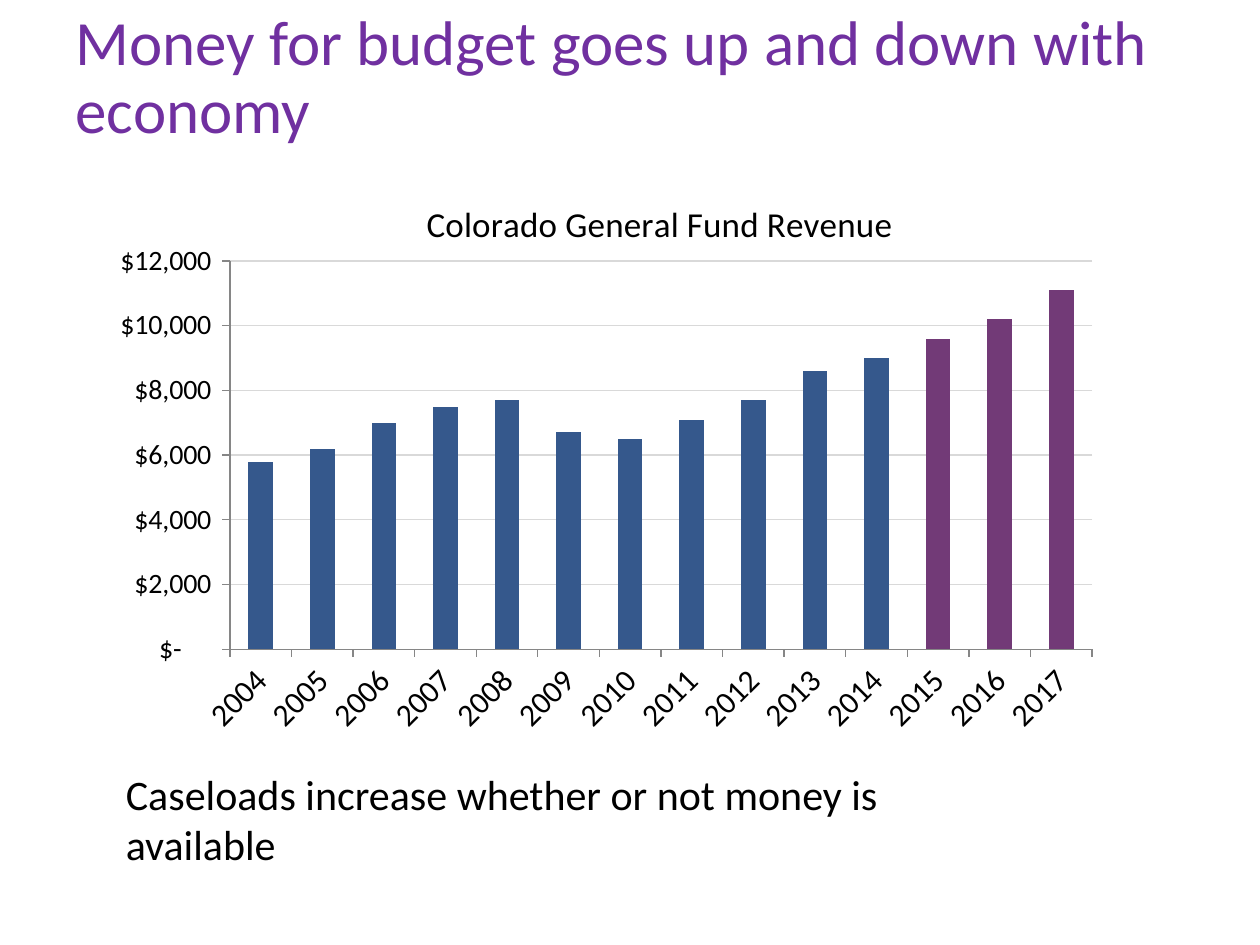
from dataclasses import dataclass

from lxml import etree
from pptx import Presentation
from pptx.chart.data import CategoryChartData
from pptx.dml.color import RGBColor
from pptx.enum.chart import XL_CHART_TYPE, XL_TICK_MARK
from pptx.enum.text import MSO_ANCHOR, PP_ALIGN
from pptx.oxml.ns import qn
from pptx.util import Inches, Pt

COLUMN = XL_CHART_TYPE.COLUMN_CLUSTERED
OUT = XL_TICK_MARK.OUTSIDE
MIDDLE, TOP = MSO_ANCHOR.MIDDLE, MSO_ANCHOR.TOP
LEFT = PP_ALIGN.LEFT

WIDE, HIGH = Inches(10), Inches(7.5)
FACE = "Calibri"
BLACK, PURPLE, BLUE, PLUM = "000000", "7030A0", "35588C", "723A77"
GRID, GREY = "D9D9D9", "868686"
MONEY = '_("$"* #,##0_);_("$"* \\(#,##0\\);_("$"* "-"??_);_(@_)'

START, RECENT = 2004, 2015
FUNDS = [5800, 6200, 7000, 7500, 7700, 6700, 6500,
         7100, 7700, 8600, 9000, 9600, 10200, 11100]


@dataclass
class Box:
    """A place, in inches."""
    left: float
    top: float
    width: float
    height: float

    def args(self) -> list:
        return [Inches(n) for n in (self.left, self.top, self.width, self.height)]


@dataclass
class Style:
    size: float
    color: str
    anchor: object = TOP
    space: float = 1.0


def rgb(code: str) -> RGBColor:
    return RGBColor.from_string(code)


def set_font(font, size: float, color: str = BLACK) -> None:
    form = {"name": FACE, "size": Pt(size), "bold": False}
    for key, value in form.items():
        setattr(font, key, value)
    font.color.rgb = rgb(color)


def set_line(line, color: str) -> None:
    line.color.rgb = rgb(color)
    line.width = Pt(0.75)


def write(shape, text: str, style: Style) -> None:
    frame = shape.text_frame
    frame.word_wrap = True
    frame.vertical_anchor = style.anchor
    para = frame.paragraphs[0]
    para.alignment = LEFT
    para.line_spacing = style.space
    run = para.add_run()
    run.text = text
    set_font(run.font, style.size, style.color)


def lay_out(parent, index: int, **shares: float) -> None:
    """Fix the place of a chart part, in shares of the chart."""
    for old in parent.findall(qn("c:layout")):
        parent.remove(old)
    layout = etree.Element(qn("c:layout"))
    manual = etree.SubElement(layout, qn("c:manualLayout"))
    marks = {"xMode": "edge", "yMode": "edge", **shares}
    if "w" in shares:
        marks = {"layoutTarget": "inner", **marks}
    for key, value in marks.items():
        etree.SubElement(manual, qn(f"c:{key}")).set("val", str(value))
    parent.insert(index, layout)


def set_axis(axis, size: float) -> None:
    axis.major_tick_mark = OUT
    set_font(axis.tick_labels.font, size)
    set_line(axis.format.line, GREY)


def add_funds(slide, box: Box) -> None:
    data = CategoryChartData()
    data.categories = [str(START + n) for n in range(len(FUNDS))]
    data.add_series("Series 1", FUNDS)
    chart = slide.shapes.add_chart(COLUMN, *box.args(), data).chart
    chart.has_legend = False
    set_font(chart.font, 10)

    chart.has_title = True
    title = chart.chart_title
    para = title.text_frame.paragraphs[0]
    run = para.add_run()
    run.text = "Colorado General Fund Revenue"
    set_font(run.font, 20)
    lay_out(title._element, 1, x=0.32, y=0.06)

    plot = chart.plots[0]
    plot.gap_width = 150
    plot.vary_by_categories = False
    series = plot.series[0]
    series.format.fill.solid()
    series.format.fill.fore_color.rgb = rgb(BLUE)
    for index in range(RECENT - START, len(FUNDS)):
        fill = series.points[index].format.fill
        fill.solid()
        fill.fore_color.rgb = rgb(PLUM)

    years, money = chart.category_axis, chart.value_axis
    set_axis(years, 18)
    years._element.find(f"{qn('c:txPr')}/{qn('a:bodyPr')}").set("rot", "-2700000")
    set_axis(money, 16)
    money.minimum_scale, money.maximum_scale, money.major_unit = 0, 12000, 2000
    money.tick_labels.number_format = MONEY
    money.tick_labels.number_format_is_linked = False
    set_line(money.major_gridlines.format.line, GRID)
    area = chart._chartSpace.chart.plotArea
    lay_out(area, 0, x=0.133, y=0.176, w=0.847, h=0.66)


def main() -> None:
    deck = Presentation()
    deck.slide_width, deck.slide_height = WIDE, HIGH
    slide = deck.slides.add_slide(deck.slide_layouts[5])

    title = slide.shapes.title
    place = Box(0.5, 0, 9, 1.25).args()
    for key, value in zip(("left", "top", "width", "height"), place):
        setattr(title, key, value)
    write(title, "Money for budget goes up and down with economy",
          Style(36, PURPLE, MIDDLE, 0.9))

    add_funds(slide, Box(0.75, 1.25, 8.08, 4.67))

    note = slide.shapes.add_textbox(*Box(0.9, 6.05, 6.92, 1.31).args())
    write(note, "Caseloads increase whether or not money is available",
          Style(24, BLACK))
    deck.save("out.pptx")


if __name__ == "__main__":
    main()
